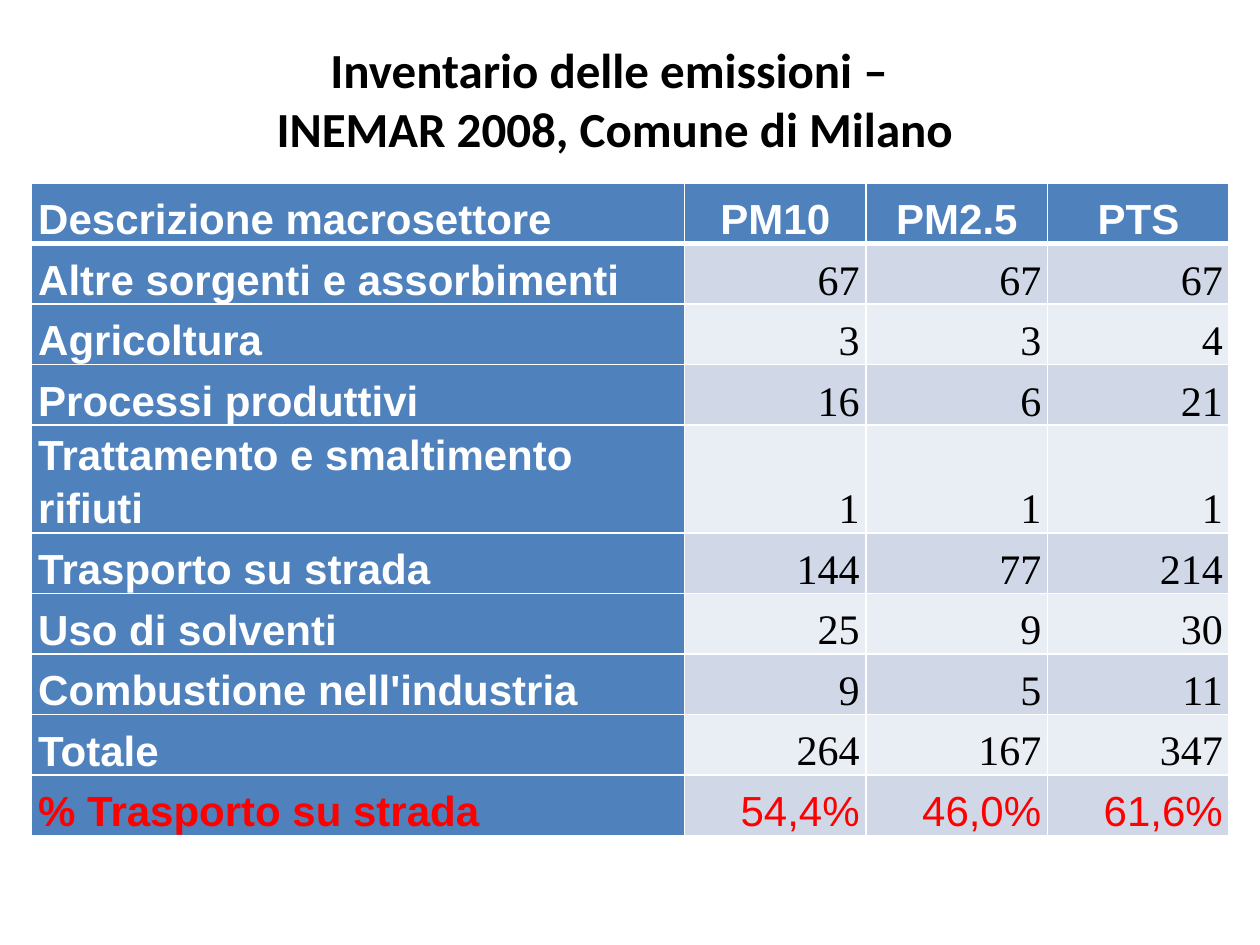
from pptx import Presentation
from pptx.dml.color import RGBColor
from pptx.enum.text import MSO_ANCHOR, PP_ALIGN
from pptx.util import Cm, Pt
from lxml.etree import SubElement
from pptx.oxml.ns import qn


def style_run(r, font, size, color, bold):
    r.font.name = font
    r.font.size = Pt(size)
    r.font.bold = bold
    r.font.color.rgb = RGBColor.from_string(color)


def add_border(cell, side, width):
    ln = SubElement(cell._tc.get_or_add_tcPr(), qn(f"a:ln{side}"), w=str(Pt(width)))
    fill = SubElement(ln, qn("a:solidFill"))
    SubElement(fill, qn("a:srgbClr"), val="FFFFFF")


prs = Presentation()
prs.slide_width, prs.slide_height = Cm(25.4), Cm(19.05)
s = prs.slides.add_slide(prs.slide_layouts[5])

title = s.shapes.title
title.left, title.top, title.width, title.height = Cm(0.64), Cm(0.76), Cm(23.5), Cm(2.46)
tf = title.text_frame
tf.vertical_anchor = MSO_ANCHOR.MIDDLE
p = tf.paragraphs[0]
p.alignment = PP_ALIGN.CENTER
for i, line in enumerate(["Inventario delle emissioni – ", "INEMAR 2008, Comune di Milano"]):
    if i:
        p.add_line_break()
    r = p.add_run()
    r.text = line
    style_run(r, "Calibri", 28, "000000", True)

rows = [
    ("Descrizione macrosettore", "PM10", "PM2.5", "PTS"),
    ("Altre sorgenti e assorbimenti", "67", "67", "67"),
    ("Agricoltura", "3", "3", "4"),
    ("Processi produttivi", "16", "6", "21"),
    ("Trattamento e smaltimento rifiuti", "1", "1", "1"),
    ("Trasporto su strada", "144", "77", "214"),
    ("Uso di solventi", "25", "9", "30"),
    ("Combustione nell'industria", "9", "5", "11"),
    ("Totale", "264", "167", "347"),
    ("% Trasporto su strada", "54,4%", "46,0%", "61,6%"),
]
widths = [13.16, 3.66, 3.66, 3.66]
last = len(rows) - 1

table = s.shapes.add_table(len(rows), len(widths), Cm(0.64), Cm(3.69), Cm(sum(widths)), Cm(12.2)).table
table.first_col = True
for col, width in zip(table.columns, widths):
    col.width = Cm(width)

for i, row in enumerate(rows):
    table.rows[i].height = Cm(1.22)
    for j, text in enumerate(row):
        cell = table.cell(i, j)
        heading = i == 0 or j == 0
        cell.vertical_anchor = MSO_ANCHOR.BOTTOM
        cell.margin_left = cell.margin_right = Cm(0.13)
        cell.margin_top = cell.margin_bottom = 0
        for side in "LRTB":
            thick = (i == 0 and side == "B") or (i == 1 and side == "T")
            add_border(cell, side, 3 if thick else 1)
        cell.fill.solid()
        band = "D0D8E8" if i % 2 else "E9EDF4"
        cell.fill.fore_color.rgb = RGBColor.from_string("4F81BD" if heading else band)

        p = cell.text_frame.paragraphs[0]
        p.line_spacing = 1.15
        if j == 0:
            p.alignment = PP_ALIGN.LEFT
        else:
            p.alignment = PP_ALIGN.RIGHT if i else PP_ALIGN.CENTER
        r = p.add_run()
        r.text = text
        font = "Arial" if heading or i == last else "Times New Roman"
        color = "FF0000" if i == last else "FFFFFF" if heading else "000000"
        style_run(r, font, 24, color, heading)

prs.save("out.pptx")
